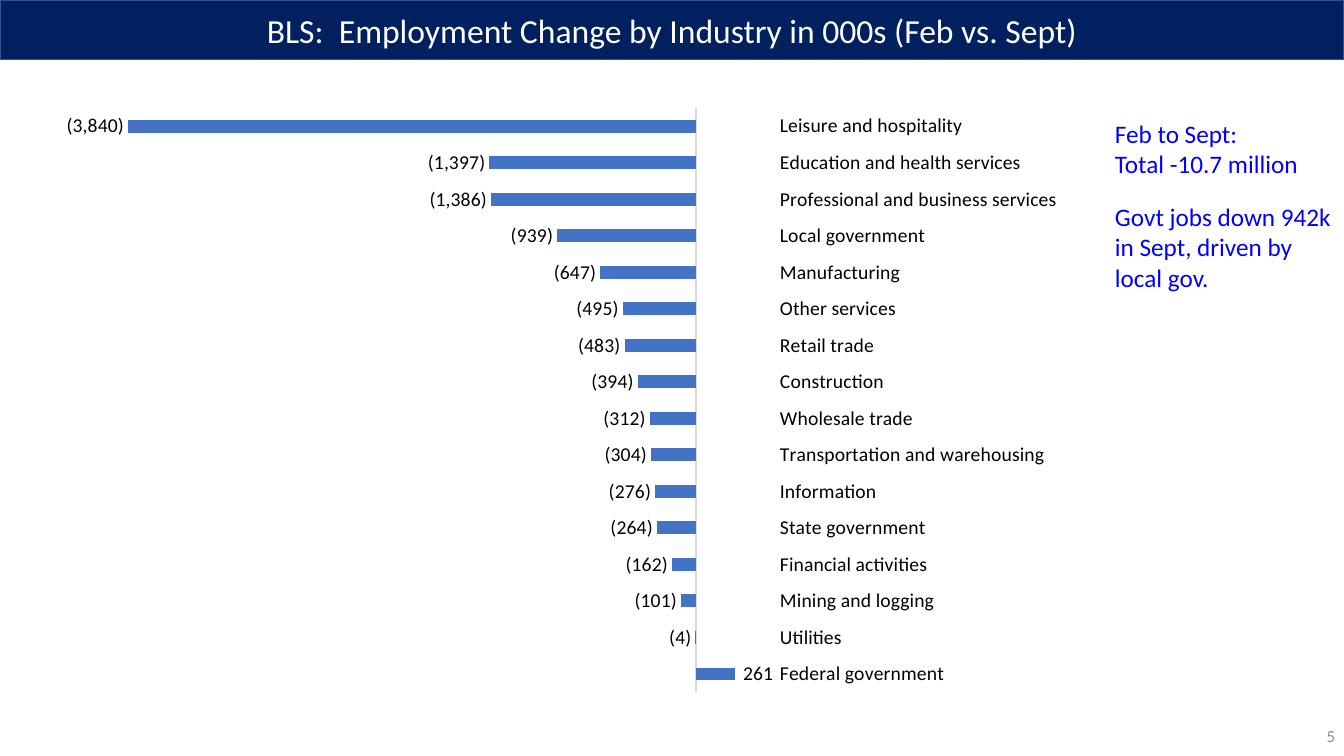
from lxml import etree
from pptx import Presentation, util as u
from pptx.chart.data import CategoryChartData
from pptx.dml.color import RGBColor
from pptx.enum import chart as ch, shapes, text
from pptx.oxml import parse_xml
from pptx.oxml.ns import nsdecls


def color(code):
    return RGBColor.from_string(code)


def assign(target, values):
    for key, value in values.items():
        setattr(target, key, value)


class Deck:
    face = "Calibri"
    navy, edge, blue, bar = "002060", "325491", "0000FF", "4472C4"
    black, white, gray, rule = "000000", "FFFFFF", "8C8C8C", "D9D9D9"
    number = r'_(* #,##0_);_(* \(#,##0\);_(* "-"??_);_(@_)'

    def __init__(self, wide, high):
        self.file = Presentation()
        assign(self.file, {"slide_width": u.Inches(wide),
                           "slide_height": u.Inches(high)})
        self.slide = self.file.slides.add_slide(self.file.slide_layouts[6])

    def font(self, font, size, code):
        assign(font, {"name": self.face, "size": u.Pt(size)})
        font.color.rgb = color(code)

    def letter(self, shape, lines, size, code, align, anchor):
        frame = shape.text_frame
        assign(frame, {"word_wrap": True, "vertical_anchor": anchor})
        for i, line in enumerate(lines):
            para = frame.add_paragraph() if i else frame.paragraphs[0]
            para.alignment = align
            run = para.add_run()
            run.text = line
            self.font(run.font, size, code)

    def banner(self, box, title):
        shape = self.slide.shapes.add_shape(
            shapes.MSO_SHAPE.RECTANGLE, *map(u.Inches, box))
        shape.shadow.inherit = False
        shape.fill.solid()
        shape.fill.fore_color.rgb = color(self.navy)
        shape.line.color.rgb = color(self.edge)
        shape.line.width = u.Pt(1)
        self.letter(shape, [title], 24, self.white,
                    text.PP_ALIGN.CENTER, text.MSO_ANCHOR.MIDDLE)

    def note(self, box, lines, size=18, code=blue,
             align=text.PP_ALIGN.LEFT, anchor=text.MSO_ANCHOR.TOP):
        shape = self.slide.shapes.add_textbox(*map(u.Inches, box))
        self.letter(shape, lines, size, code, align, anchor)

    def bars(self, box, rows, low, high, plot):
        data = CategoryChartData(number_format=self.number)
        data.categories = [name for name, _ in rows]
        data.add_series("Series 1", [value for _, value in rows])
        chart = self.slide.shapes.add_chart(
            ch.XL_CHART_TYPE.BAR_CLUSTERED, *map(u.Inches, box), data).chart
        assign(chart, {"has_legend": False, "has_title": False})
        self.font(chart.font, 10, self.black)

        # Axes
        names, scale = chart.category_axis, chart.value_axis
        assign(names, {"major_tick_mark": ch.XL_TICK_MARK.NONE,
                       "minor_tick_mark": ch.XL_TICK_MARK.NONE,
                       "tick_label_position": ch.XL_TICK_LABEL_POSITION.HIGH,
                       "has_major_gridlines": False})
        self.font(names.tick_labels.font, 14, self.black)
        names.format.line.color.rgb = color(self.rule)
        names.format.line.width = u.Pt(0.75)
        assign(scale, {"visible": False, "has_major_gridlines": False,
                       "minimum_scale": low, "maximum_scale": high})

        # Bars and labels
        group = chart.plots[0]
        assign(group, {"gap_width": 182, "vary_by_categories": False,
                       "has_data_labels": True})
        series = group.series[0]
        series.invert_if_negative = False
        series.format.fill.solid()
        series.format.fill.fore_color.rgb = color(self.bar)
        labels = group.data_labels
        assign(labels, {"show_value": True, "number_format": self.number,
                        "number_format_is_linked": False,
                        "position": ch.XL_LABEL_POSITION.OUTSIDE_END})
        self.font(labels.font, 14, self.black)

        # Fixed plot area
        area = group._element.getparent()
        for old in area.findall("{*}layout"):
            area.remove(old)
        layout = parse_xml(f'<c:layout {nsdecls("c")}><c:manualLayout/></c:layout>')
        space = "{" + etree.QName(layout).namespace + "}"
        parts = {"layoutTarget": "inner", "xMode": "edge", "yMode": "edge",
                 **dict(zip("xywh", plot))}
        for key, value in parts.items():
            etree.SubElement(layout[0], space + key).set("val", str(value))
        area.insert(0, layout)


def main():
    deck = Deck(13.33, 7.5)

    # Title and page number
    deck.banner((0, 0, 13.33, 0.59),
                "BLS:  Employment Change by Industry in 000s (Feb vs. Sept)")
    deck.note((10.34, 7.1, 3, 0.4), ["5"], 12, deck.gray,
              text.PP_ALIGN.RIGHT, text.MSO_ANCHOR.MIDDLE)

    # Job change by industry, bottom to top
    rows = [
        ("Federal government", 261),
        ("Utilities", -4),
        ("Mining and logging", -101),
        ("Financial activities", -162),
        ("State government", -264),
        ("Information", -276),
        ("Transportation and warehousing", -304),
        ("Wholesale trade", -312),
        ("Construction", -394),
        ("Retail trade", -483),
        ("Other services", -495),
        ("Manufacturing", -647),
        ("Local government", -939),
        ("Professional and business services", -1386),
        ("Education and health services", -1397),
        ("Leisure and hospitality", -3840),
    ]
    deck.bars((0.09, 0.95, 10.63, 6.04), rows, -4500, 500,
              (0.02, 0.02, 0.69, 0.96))

    # Side notes
    deck.note((10.96, 1.12, 2.03, 1.31), ["Feb to Sept:", "Total -10.7 million"])
    deck.note((10.96, 1.95, 2.38, 1.01),
              ["Govt jobs down 942k in Sept, driven by local gov."])

    deck.file.save("out.pptx")


if __name__ == "__main__":
    main()
